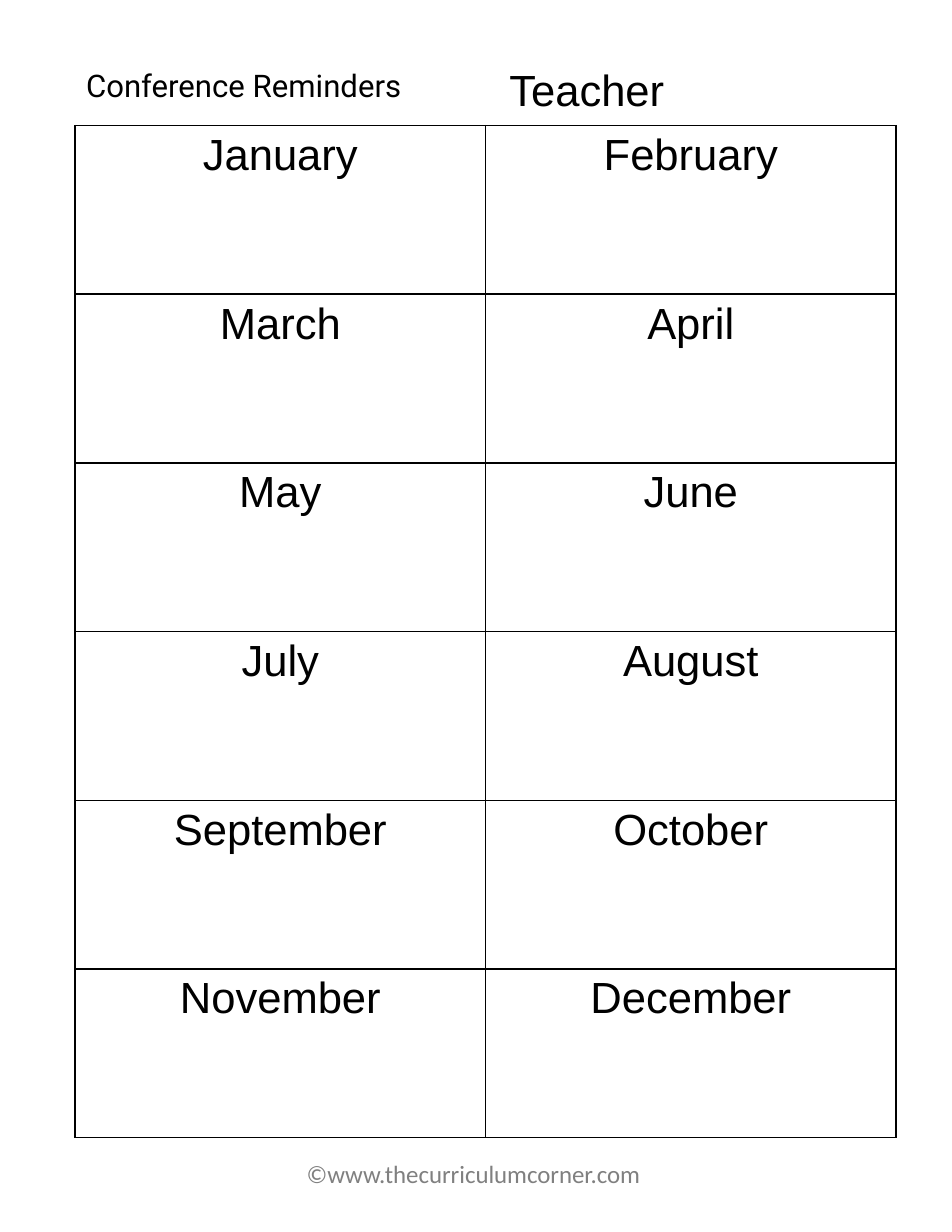
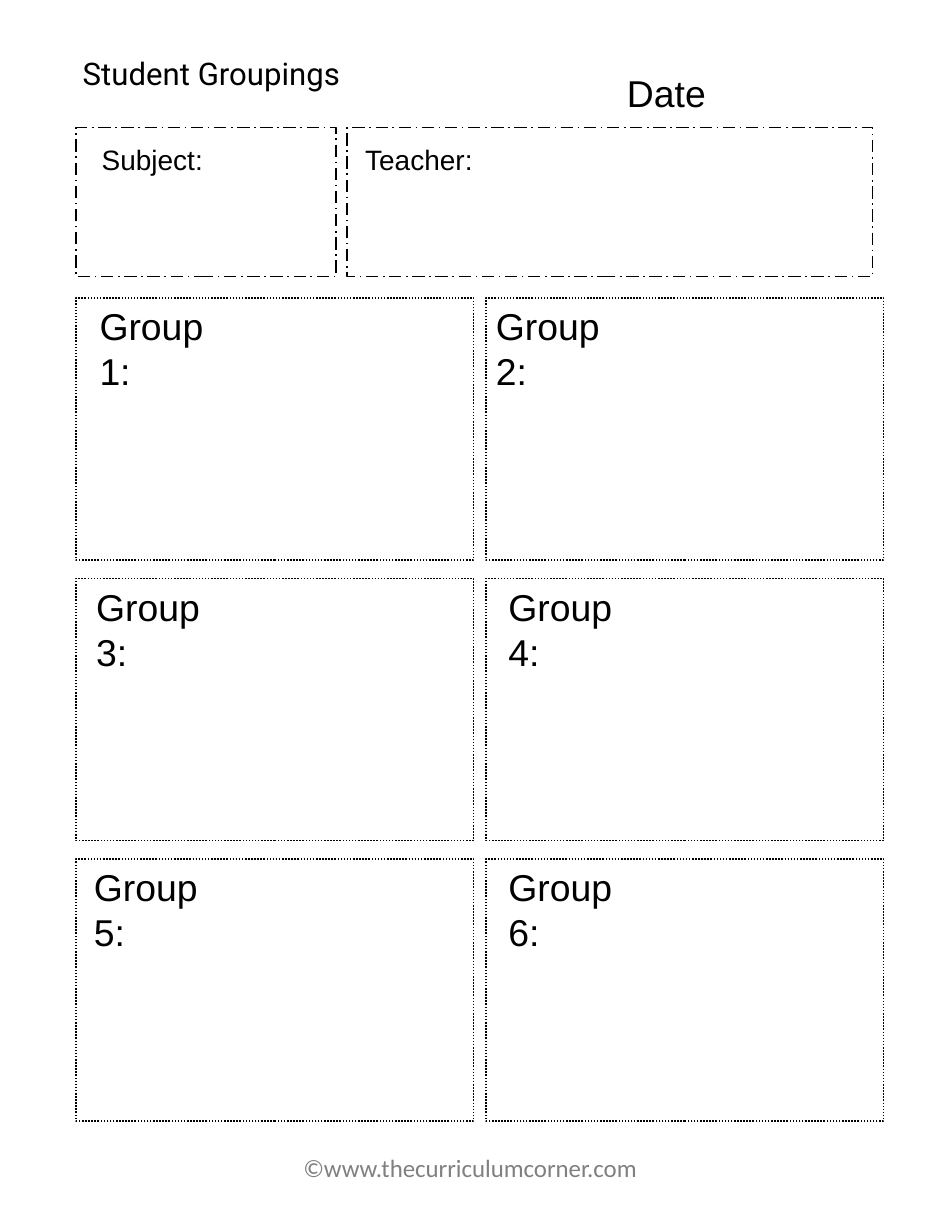
from dataclasses import dataclass

from lxml import etree
from pptx import Presentation
from pptx.dml.color import RGBColor
from pptx.enum.dml import MSO_LINE
from pptx.enum.shapes import MSO_SHAPE
from pptx.enum.text import MSO_AUTO_SIZE, PP_ALIGN
from pptx.oxml.ns import qn
from pptx.util import Inches, Pt

RECTANGLE = MSO_SHAPE.RECTANGLE
DOTTED = MSO_LINE.ROUND_DOT
DASH_DOT = MSO_LINE.LONG_DASH_DOT
LEFT = PP_ALIGN.LEFT
CENTER = PP_ALIGN.CENTER
GROW = MSO_AUTO_SIZE.SHAPE_TO_FIT_TEXT

GRID_COLUMNS, GRID_ROWS = 85, 110
BLANK_LAYOUT = 6
MONTHS = [
    ("January", "February"),
    ("March", "April"),
    ("May", "June"),
    ("July", "August"),
    ("September", "October"),
    ("November", "December"),
]
GROUP_LABEL_INDENTS = (1.1, -0.1, 0.8, 1, 0.6, 1)


@dataclass(frozen=True)
class Theme:
    """Colours, line width and text styles of the planner pages."""

    ink: RGBColor = RGBColor(0, 0, 0)
    paper: RGBColor = RGBColor(255, 255, 255)
    muted: RGBColor = RGBColor(128, 128, 128)
    line_width: int = Pt(1)

    def font(self, role):
        """Return the font values and colour for a text role."""
        name, size, color = {
            "title": ("Roboto", 20, self.ink),
            "heading": ("Arial", 28, self.ink),
            "group": ("Arial", 24, self.ink),
            "label": ("Arial", 18, self.ink),
            "footer": ("Calibri", 16, self.muted),
        }[role]
        return {"name": name, "size": Pt(size)}, color


class Planner:
    """Draws planner pages on a grid of columns and rows."""

    def __init__(self, theme):
        """Start a letter-size presentation."""
        self.theme = theme
        self.presentation = Presentation()
        self.presentation.slide_width = Inches(8.5)
        self.presentation.slide_height = Inches(11)
        self.slide = None

    def columns(self, count):
        """Turn grid columns into a length."""
        return round(self.presentation.slide_width * count / GRID_COLUMNS)

    def rows(self, count):
        """Turn grid rows into a length."""
        return round(self.presentation.slide_height * count / GRID_ROWS)

    def box(self, left, top, width, height):
        """Turn a grid area into lengths."""
        return self.columns(left), self.rows(top), self.columns(width), self.rows(height)

    def page(self, title, title_area, footer_left, footer_top):
        """Add a page with its title and footer."""
        layout = self.presentation.slide_layouts[BLANK_LAYOUT]
        self.slide = self.presentation.slides.add_slide(layout)
        self.text(title, title_area, "title")
        self.text("©www.thecurriculumcorner.com", (footer_left, footer_top, 32.2, 3.7), "footer")

    def fill_paragraph(self, paragraph, words, role, alignment):
        """Put styled words into a paragraph."""
        paragraph.text = words
        paragraph.alignment = alignment
        values, color = self.theme.font(role)
        for name, value in values.items():
            setattr(paragraph.font, name, value)
        paragraph.font.color.rgb = color

    def text(self, words, area, role, alignment=LEFT):
        """Add a text box."""
        frame = self.slide.shapes.add_textbox(*self.box(*area)).text_frame
        for name, value in {"word_wrap": True, "auto_size": GROW}.items():
            setattr(frame, name, value)
        self.fill_paragraph(frame.paragraphs[0], words, role, alignment)

    def frame(self, area, dash):
        """Add an empty writing frame."""
        shape = self.slide.shapes.add_shape(RECTANGLE, *self.box(*area))
        shape.shadow.inherit = False
        shape.fill.solid()
        shape.fill.fore_color.rgb = self.theme.paper
        shape.line.color.rgb = self.theme.ink
        for name, value in {"width": self.theme.line_width, "dash_style": dash}.items():
            setattr(shape.line, name, value)

    def border(self, cell):
        """Draw the four sides of a table cell."""
        properties = cell._tc.get_or_add_tcPr()
        for side in ("a:lnL", "a:lnR", "a:lnT", "a:lnB"):
            line = etree.SubElement(properties, qn(side), w=str(self.theme.line_width))
            fill = etree.SubElement(line, qn("a:solidFill"))
            etree.SubElement(fill, qn("a:srgbClr"), val=str(self.theme.ink))

    def table(self, entries, area):
        """Add a table with evenly sized cells."""
        shape = self.slide.shapes.add_table(len(entries), len(entries[0]), *self.box(*area))
        table = shape.table
        for name, value in {"first_row": False, "horz_banding": False}.items():
            setattr(table, name, value)
        for row, words_in_row in enumerate(entries):
            for column, words in enumerate(words_in_row):
                cell = table.cell(row, column)
                self.border(cell)
                cell.fill.solid()
                cell.fill.fore_color.rgb = self.theme.paper
                self.fill_paragraph(cell.text_frame.paragraphs[0], words, "heading", CENTER)


def add_conference_reminders(planner):
    """Build the page of months."""
    planner.page("Conference Reminders", (6.7, 5.4, 30.6, 4.4), 26.4, 103)
    planner.text("Teacher:", (44.5, 5.1, 16.6, 5.7), "heading")
    planner.table(MONTHS, (6.7, 11.2, 73.3, 90.4))


def add_student_groupings(planner):
    """Build the page of student groups."""
    planner.page("Student Groupings", (6.4, 4.4, 25.9, 4.4), 26.1, 102.4)
    planner.text("Date:", (55, 5.8, 9.4, 5), "group")
    for label, left, width, label_left, label_width in (
        ("Subject:", 6.8, 23.2, 5.1, 17),
        ("Teacher:", 31, 46.9, 31, 12.8),
    ):
        planner.frame((left, 11.4, width, 13.3), DASH_DOT)
        planner.text(label, (label_left, 12.2, label_width, 4.4), "label", CENTER)
    for index, indent in enumerate(GROUP_LABEL_INDENTS):
        row, column = divmod(index, 2)
        left, top = 6.8 + 36.6 * column, 26.6 + 25.05 * row
        planner.frame((left, top, 35.5, 23.4), DOTTED)
        planner.text(f"Group {index + 1}:", (left + indent, top, 12.8, 5), "group")


def main():
    """Build and save both pages."""
    planner = Planner(Theme())
    add_conference_reminders(planner)
    add_student_groupings(planner)
    planner.presentation.save("out.pptx")


if __name__ == "__main__":
    main()
